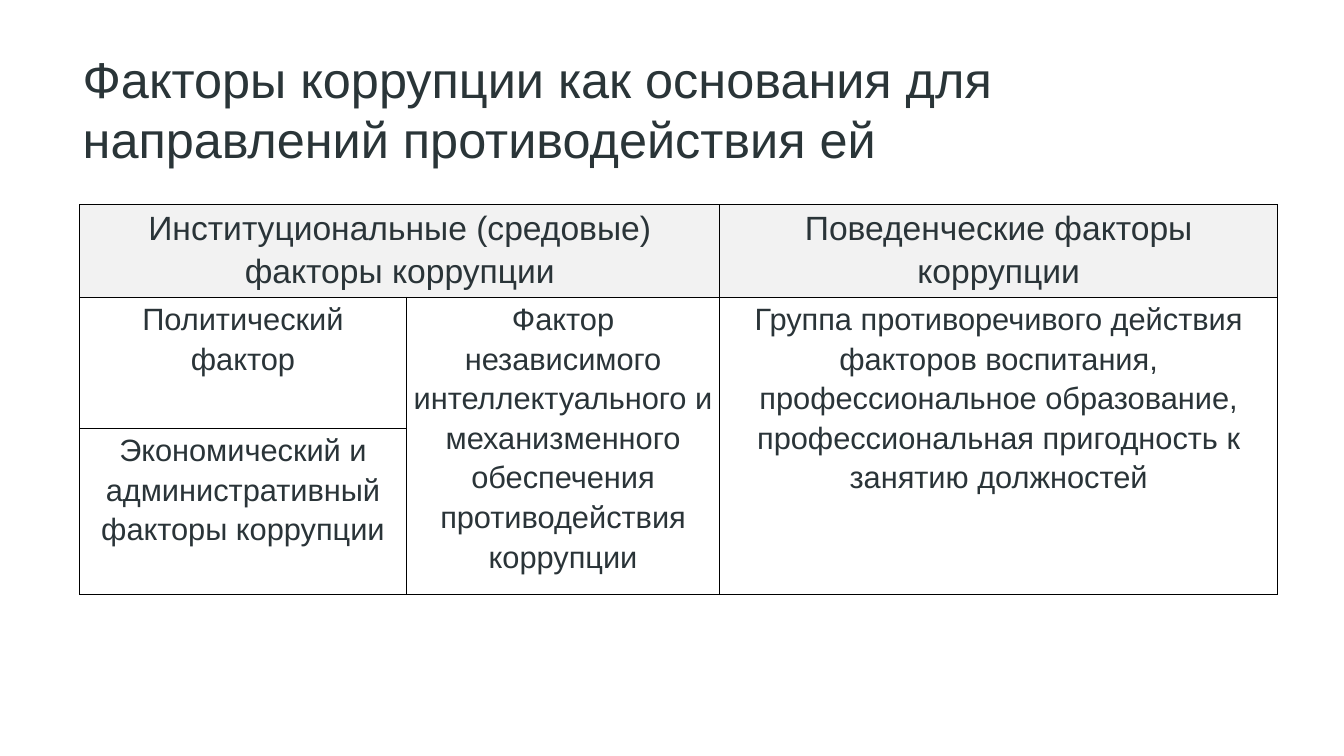
from lxml import etree
from pptx import Presentation
from pptx.dml.color import RGBColor
from pptx.enum.text import MSO_ANCHOR as Anchor, PP_ALIGN as Align
from pptx.oxml.ns import qn
from pptx.util import Inches, Pt

COLORS = {"title": "2A3538", "text": "2A3438", "header": "F2F2F2", "border": "000000"}
FONT = "Arial"

COLUMN_WIDTHS = (3.24, 3.11, 5.53)
ROW_HEIGHTS = (0.92, 1.3, 1.65)
# (row, column, rows spanned, columns spanned, text)
FACTORS = (
    (0, 0, 1, 2, "Институциональные (средовые) факторы коррупции"),
    (0, 2, 1, 1, "Поведенческие факторы коррупции"),
    (1, 0, 1, 1, "Политический фактор"),
    (1, 1, 2, 1, "Фактор независимого интеллектуального и механизменного "
                 "обеспечения противодействия коррупции"),
    (1, 2, 2, 1, "Группа противоречивого действия факторов воспитания, "
                 "профессиональное образование, профессиональная пригодность "
                 "к занятию должностей"),
    (2, 0, 1, 1, "Экономический и административный факторы коррупции"),
)


def write_text(frame, text, size, color, align=Align.LEFT, spacing=1.0):
    para = frame.paragraphs[0]
    para.alignment = align
    para.line_spacing = spacing
    span = para.add_run()
    span.text = text
    span.font.name = FONT
    span.font.size = Pt(size)
    span.font.color.rgb = RGBColor.from_string(COLORS[color])


def set_borders(cell, color, width):
    """Draw a solid line on all four sides, ahead of any fill in the cell."""
    properties = cell._tc.get_or_add_tcPr()
    for index, side in enumerate(("a:lnL", "a:lnR", "a:lnT", "a:lnB")):
        line = etree.Element(qn(side), w=str(Pt(width)))
        fill = etree.SubElement(line, qn("a:solidFill"))
        etree.SubElement(fill, qn("a:srgbClr"), val=COLORS[color])
        properties.insert(index, line)


def add_title(page, left, top, width, height):
    box = page.shapes.add_textbox(Inches(left), Inches(top), Inches(width), Inches(height))
    frame = box.text_frame
    frame.word_wrap = True
    frame.vertical_anchor = Anchor.MIDDLE
    frame.margin_left = frame.margin_right = Inches(0.03)
    frame.margin_top = frame.margin_bottom = Inches(0.03)
    write_text(frame, "Факторы коррупции как основания для направлений противодействия ей",
               36, "title")


def add_factor_table(page, left, top):
    table = page.shapes.add_table(
        len(ROW_HEIGHTS), len(COLUMN_WIDTHS), Inches(left), Inches(top),
        Inches(sum(COLUMN_WIDTHS)), Inches(sum(ROW_HEIGHTS))).table
    table.first_row = table.horz_banding = False
    for column, width in zip(table.columns, COLUMN_WIDTHS):
        column.width = Inches(width)
    for row, height in zip(table.rows, ROW_HEIGHTS):
        row.height = Inches(height)

    for cell in table.iter_cells():
        cell.fill.background()
        cell.margin_left = cell.margin_right = Inches(0.07)
        cell.margin_top = cell.margin_bottom = 0
        set_borders(cell, "border", 1)

    for row, column, row_span, column_span, text in FACTORS:
        cell = table.cell(row, column)
        if row_span * column_span > 1:
            cell.merge(table.cell(row + row_span - 1, column + column_span - 1))
        is_header = row == 0
        if is_header:
            cell.fill.solid()
            cell.fill.fore_color.rgb = RGBColor.from_string(COLORS["header"])
        write_text(cell.text_frame, text, 24 if is_header else 22, "text",
                   align=Align.CENTER, spacing=1.15)


def main():
    deck = Presentation()
    deck.slide_width, deck.slide_height = Inches(13.33), Inches(7.5)
    page = deck.slides.add_slide(deck.slide_layouts[6])
    add_title(page, 0.79, 0.35, 11.65, 1.45)
    add_factor_table(page, 0.79, 2.03)
    deck.save("out.pptx")


if __name__ == "__main__":
    main()
